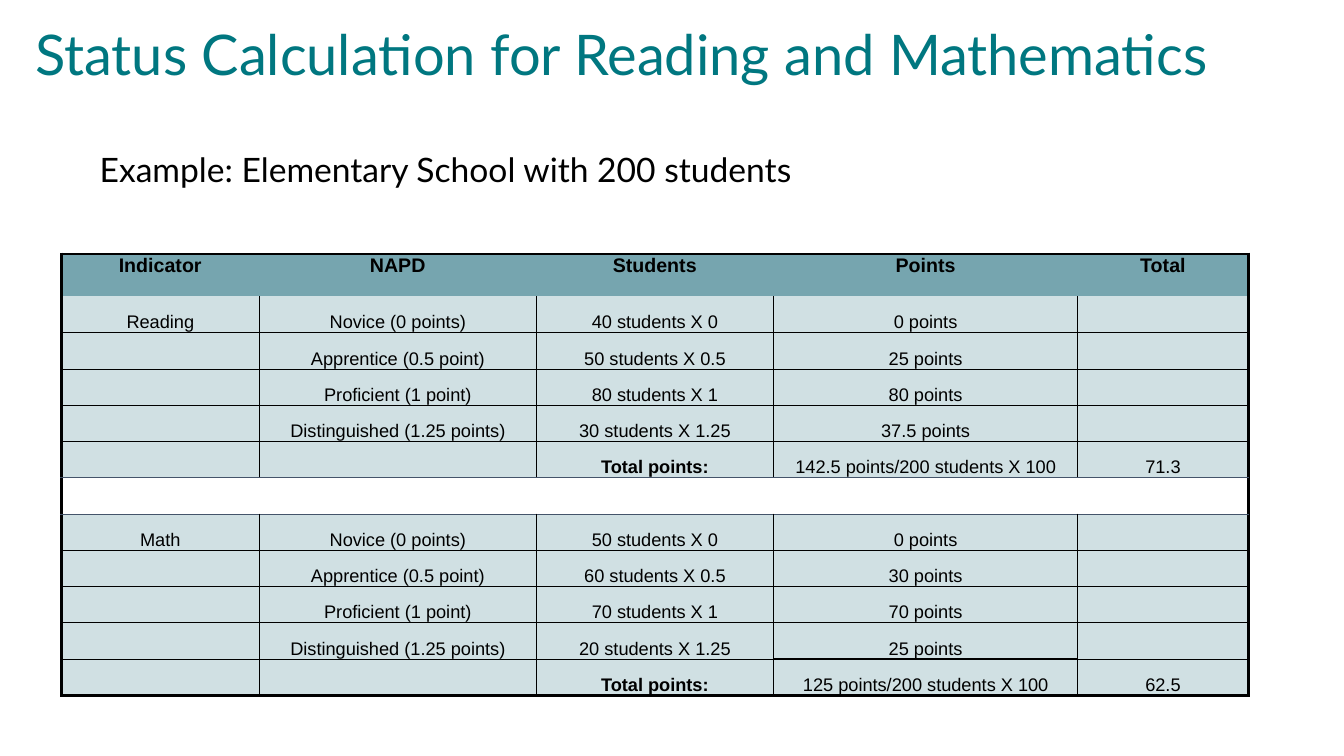
from dataclasses import dataclass

from lxml.etree import SubElement
from pptx import Presentation
from pptx.dml.color import RGBColor
from pptx.enum.text import MSO_ANCHOR, PP_ALIGN
from pptx.oxml.ns import qn
from pptx.slide import Slide
from pptx.table import _Cell
from pptx.text.text import TextFrame
from pptx.util import Inches, Pt

COLORS = {
    "title": "007780",
    "text": "000000",
    "header": "76A5AF",
    "body": "D0E0E3",
    "line": "000000",
    "gap_line": "44546A",
}
HEADINGS = ["Indicator", "NAPD", "Students", "Points", "Total"]
LEVELS = [
    ("Novice (0 points)", "0"),
    ("Apprentice (0.5 point)", "0.5"),
    ("Proficient (1 point)", "1"),
    ("Distinguished (1.25 points)", "1.25"),
]
COLUMN_WIDTHS = [1.96, 2.75, 2.35, 3.02, 1.69]
HEADER_HEIGHT, ROW_HEIGHT = 0.42, 0.36
HEADER_ROW, GAP_ROW, LAST_ROW = 0, 6, 11
POINTS_COLUMN = 3


@dataclass
class Indicator:
    name: str
    students: list[int]
    points: list[str]
    points_sum: str
    total: str

    def rows(self) -> list[list[str]]:
        levels = [
            [self.name if index == 0 else "", label, f"{count} students X {weight}", f"{points} points", ""]
            for index, ((label, weight), count, points) in enumerate(zip(LEVELS, self.students, self.points))
        ]
        formula = f"{self.points_sum} points/200 students X 100"
        return levels + [["", "", "Total points:", formula, self.total]]


@dataclass
class Border:
    width: float = 0
    color: str = "line"


READING = Indicator("Reading", [40, 50, 80, 30], ["0", "25", "80", "37.5"], "142.5", "71.3")
MATH = Indicator("Math", [50, 60, 70, 20], ["0", "30", "70", "25"], "125", "62.5")


def write_text(frame: TextFrame, text: str, *, size: float, font: str = "Arial", color: str = "text",
               bold: bool = False, align: PP_ALIGN = PP_ALIGN.LEFT, line_spacing: float = 1.0) -> None:
    paragraph = frame.paragraphs[0]
    paragraph.alignment = align
    paragraph.line_spacing = line_spacing
    run = paragraph.add_run()
    run.text = text
    run.font.name = font
    run.font.size = Pt(size)
    run.font.bold = bold
    run.font.color.rgb = RGBColor.from_string(COLORS[color])


def add_frame(slide: Slide, left: float, top: float, width: float, height: float) -> TextFrame:
    box = slide.shapes.add_textbox(Inches(left), Inches(top), Inches(width), Inches(height))
    box.text_frame.word_wrap = True
    return box.text_frame


def row_border(boundary: int, column: int) -> Border:
    """Horizontal line above the row with the number of the boundary."""
    if boundary in (HEADER_ROW, LAST_ROW + 1):
        return Border(2.25)
    if boundary == HEADER_ROW + 1:
        return Border()
    if boundary in (GAP_ROW, GAP_ROW + 1):
        return Border(0.5, "gap_line")
    is_sum = column == POINTS_COLUMN and boundary in (GAP_ROW - 1, LAST_ROW)
    return Border(1 if is_sum else 0.5)


def column_border(row: int, boundary: int) -> Border:
    """Vertical line to the left of the column with the number of the boundary."""
    if boundary in (0, len(HEADINGS)):
        return Border(2.25)
    return Border() if row in (HEADER_ROW, GAP_ROW) else Border(0.5)


def draw_border(cell: _Cell, tag: str, border: Border) -> None:
    properties = cell._tc.get_or_add_tcPr()
    line = SubElement(properties, qn(tag), w=str(int(Pt(border.width))))
    if border.width:
        fill = SubElement(line, qn("a:solidFill"))
        SubElement(fill, qn("a:srgbClr"), val=COLORS[border.color])
    else:
        SubElement(line, qn("a:noFill"))


def format_cell(cell: _Cell, row: int, column: int, text: str) -> None:
    is_header = row == HEADER_ROW
    cell.margin_left = cell.margin_right = cell.margin_top = Inches(0.01)
    cell.margin_bottom = 0
    cell.vertical_anchor = MSO_ANCHOR.TOP if is_header else MSO_ANCHOR.BOTTOM
    if text:
        write_text(cell.text_frame, text, size=14 if is_header else 13,
                   bold=is_header or text.startswith("Total"), align=PP_ALIGN.CENTER)
    draw_border(cell, "a:lnL", column_border(row, column))
    draw_border(cell, "a:lnR", column_border(row, column + 1))
    draw_border(cell, "a:lnT", row_border(row, column))
    draw_border(cell, "a:lnB", row_border(row + 1, column))
    if row == GAP_ROW:
        cell.fill.background()
    else:
        cell.fill.solid()
        cell.fill.fore_color.rgb = RGBColor.from_string(COLORS["header" if is_header else "body"])


def add_status_table(slide: Slide) -> None:
    rows = [HEADINGS, *READING.rows(), [""] * len(HEADINGS), *MATH.rows()]
    height = HEADER_HEIGHT + ROW_HEIGHT * LAST_ROW
    table = slide.shapes.add_table(len(rows), len(HEADINGS), Inches(0.61), Inches(2.52),
                                   Inches(sum(COLUMN_WIDTHS)), Inches(height)).table
    table.first_row = table.horz_banding = False
    for column, width in zip(table.columns, COLUMN_WIDTHS):
        column.width = Inches(width)
    for row, texts in enumerate(rows):
        table.rows[row].height = Inches(HEADER_HEIGHT if row == HEADER_ROW else ROW_HEIGHT)
        for column, text in enumerate(texts):
            format_cell(table.cell(row, column), row, column, text)


def main() -> None:
    presentation = Presentation()
    presentation.slide_width, presentation.slide_height = Inches(13.33), Inches(7.5)
    slide = presentation.slides.add_slide(presentation.slide_layouts[6])

    # Title
    title = add_frame(slide, 0, 0, 13.33, 1.14)
    title.margin_left = Inches(0.35)
    title.vertical_anchor = MSO_ANCHOR.MIDDLE
    write_text(title, "Status Calculation for Reading and Mathematics",
               size=40, font="Lato", color="title", line_spacing=0.9)

    # Example
    example = add_frame(slide, 0.89, 1.43, 10.11, 0.5)
    write_text(example, "Example: Elementary School with 200 students", size=24, font="Lato")

    # Points table
    add_status_table(slide)
    presentation.save("out.pptx")


if __name__ == "__main__":
    main()
